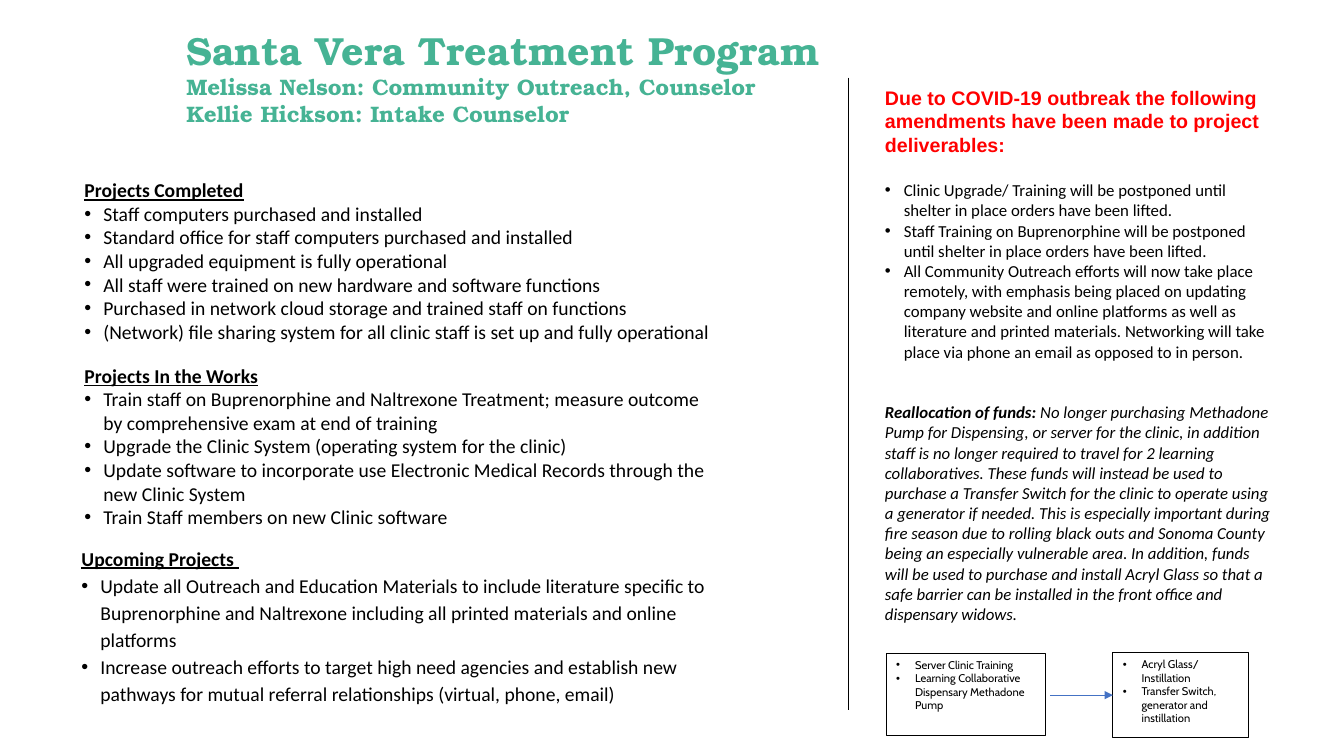
from dataclasses import dataclass

from lxml import etree
from pptx import Presentation
from pptx.dml.color import RGBColor
from pptx.enum.shapes import MSO_CONNECTOR, MSO_SHAPE
from pptx.enum.text import MSO_ANCHOR, MSO_AUTO_SIZE, PP_ALIGN
from pptx.oxml.ns import qn
from pptx.shapes.base import BaseShape
from pptx.shapes.connector import Connector
from pptx.slide import Slide
from pptx.text.text import TextFrame
from pptx.util import Pt

RECT = MSO_SHAPE.RECTANGLE
STRAIGHT = MSO_CONNECTOR.STRAIGHT
TOP = MSO_ANCHOR.TOP
GROW = MSO_AUTO_SIZE.SHAPE_TO_FIT_TEXT
LEFT = PP_ALIGN.LEFT
JUSTIFY = PP_ALIGN.JUSTIFY
LEFT_SIDE = 1


@dataclass(frozen=True)
class Style:
    face: str
    size: float
    color: RGBColor
    bold: bool = False
    italic: bool = False
    under: bool = False


BLACK = RGBColor(0, 0, 0)
GREEN = RGBColor(0x46, 0xB3, 0x94)


@dataclass(frozen=True)
class Theme:
    paper: RGBColor = RGBColor(255, 255, 255)
    ink: RGBColor = BLACK
    arrow: RGBColor = RGBColor(0x44, 0x72, 0xC4)
    title: Style = Style("TeX Gyre Bonum", 28, GREEN, bold=True)
    staff: Style = Style("TeX Gyre Bonum", 16, GREEN, bold=True)
    head: Style = Style("Calibri", 14, BLACK, bold=True, under=True)
    body: Style = Style("Calibri", 14, BLACK)
    alert: Style = Style("Arial", 14, RGBColor(255, 0, 0), bold=True)
    note: Style = Style("Calibri", 12, BLACK)
    funds: Style = Style("Calibri", 12, BLACK, italic=True)
    small: Style = Style("Cabin", 8, BLACK)
    hang: float = 13.5


THEME = Theme()


@dataclass(frozen=True)
class Para:
    text: str
    style: Style
    bullet: bool = False
    lead: str = ""
    align: PP_ALIGN = LEFT
    after: float = 0


@dataclass(frozen=True)
class Box:
    left: float
    top: float
    width: float
    height: float
    paras: list[Para]
    indent: float = 0
    space: float = 1


def points(style: Style, *texts: str) -> list[Para]:
    return [Para(text, style, bullet=True) for text in texts]


WORKS = Box(53.3, 256.3, 465, 126, [
    Para("Projects In the Works", THEME.head, align=JUSTIFY),
    *points(
        THEME.body,
        "Train staff on Buprenorphine and Naltrexone Treatment; measure outcome by comprehensive exam at end of training",
        "Upgrade the Clinic System (operating system for the clinic)",
        "Update software to incorporate use Electronic Medical Records through the new Clinic System",
        "Train Staff members on new Clinic software",
    ),
])
DONE = Box(53.3, 123.8, 508.3, 140.4, [
    Para("Projects Completed", THEME.head),
    *points(
        THEME.body,
        "Staff computers purchased and installed",
        "Standard office for staff computers purchased and installed",
        "All upgraded equipment is fully operational",
        "All staff were trained on new hardware and software functions",
        "Purchased in network cloud storage and trained staff on functions",
        "(Network) file sharing system for all clinic staff is set up and fully operational",
    ),
])
COMING = Box(15.1, 384.5, 504.7, 123.1, [
    Para("Upcoming Projects ", THEME.head, align=JUSTIFY),
    *points(
        THEME.body,
        "Update all Outreach and Education Materials to include literature specific to Buprenorphine and Naltrexone including all printed materials and online platforms",
        "Increase outreach efforts to target high need agencies and establish new pathways for mutual referral relationships (virtual, phone, email)",
    ),
], indent=36, space=1.15)
CHANGES = Box(625, 57.6, 291.6, 395.3, [
    Para("Due to COVID-19 outbreak the following amendments have been made to project deliverables:", THEME.alert, after=17),
    *points(
        THEME.note,
        "Clinic Upgrade/ Training will be postponed until shelter in place orders have been lifted.",
        "Staff Training on Buprenorphine will be postponed until shelter in place orders have been lifted.",
    ),
    Para(
        "All Community Outreach efforts will now take place remotely, with emphasis being placed on updating company website and online platforms as well as literature and printed materials. Networking will take place via phone an email as opposed to in person.",
        THEME.note, bullet=True, after=29,
    ),
    Para(
        " No longer purchasing Methadone Pump for Dispensing, or server for the clinic, in addition staff is no longer required to travel for 2 learning collaboratives. These funds will instead be used to purchase a Transfer Switch for the clinic to operate using a generator if needed. This is especially important during fire season due to rolling black outs and Sonoma County being an especially vulnerable area. In addition, funds will be used to purchase and install Acryl Glass so that a safe barrier can be installed in the front office and dispensary widows.",
        THEME.funds, lead="Reallocation of funds:",
    ),
])
TITLE = Box(126, 15.1, 488.9, 79.9, [
    Para("Santa Vera Treatment Program", THEME.title),
    Para("Melissa Nelson: Community Outreach, Counselor", THEME.staff),
    Para("Kellie Hickson: Intake Counselor", THEME.staff),
])
BEFORE = Box(633, 466.6, 113.8, 59, points(
    THEME.small,
    "Server Clinic Training",
    "Learning Collaborative Dispensary Methadone Pump",
))
AFTER = Box(794.9, 466.2, 97.2, 60.6, points(
    THEME.small,
    "Acryl Glass/ Instillation",
    "Transfer Switch, generator and instillation",
))


def write(frame: TextFrame, box: Box) -> None:
    frame.word_wrap = True
    frame.vertical_anchor = TOP
    for index, para in enumerate(box.paras):
        line = frame.paragraphs[0] if index == 0 else frame.add_paragraph()
        line.alignment = para.align
        line.line_spacing = box.space
        line.space_after = Pt(para.after)
        props = line._p.get_or_add_pPr()
        hang = THEME.hang if para.bullet else 0
        props.set("marL", str(Pt(box.indent + hang)))
        props.set("indent", str(Pt(-hang)))
        if para.bullet:
            etree.SubElement(props, qn("a:buFont")).set("typeface", "Arial")
            etree.SubElement(props, qn("a:buChar")).set("char", "•")
        font, style = line.font, para.style
        font.name, font.size = style.face, Pt(style.size)
        font.bold, font.italic = style.bold, style.italic
        font.underline = style.under
        font.color.rgb = style.color
        if para.lead:
            run = line.add_run()
            run.text = para.lead
            run.font.bold = True
        line.add_run().text = para.text


def add_text(slide: Slide, box: Box) -> None:
    shape = slide.shapes.add_textbox(Pt(box.left), Pt(box.top), Pt(box.width), Pt(box.height))
    write(shape.text_frame, box)
    shape.text_frame.auto_size = GROW


def add_panel(slide: Slide, box: Box) -> BaseShape:
    shape = slide.shapes.add_shape(RECT, Pt(box.left), Pt(box.top), Pt(box.width), Pt(box.height))
    shape.shadow.inherit = False
    shape.fill.solid()
    shape.fill.fore_color.rgb = THEME.paper
    shape.line.color.rgb = THEME.ink
    shape.line.width = Pt(0.75)
    write(shape.text_frame, box)
    return shape


def add_line(slide: Slide, x1: float, y1: float, x2: float, y2: float, color: RGBColor) -> Connector:
    line = slide.shapes.add_connector(STRAIGHT, Pt(x1), Pt(y1), Pt(x2), Pt(y2))
    line.line.color.rgb = color
    line.line.width = Pt(0.5)
    etree.SubElement(line._element.spPr, qn("a:effectLst"))
    return line


def main() -> None:
    deck = Presentation()
    deck.slide_width, deck.slide_height = Pt(960), Pt(540)
    slide = deck.slides.add_slide(deck.slide_layouts[6])
    for box in (WORKS, DONE, COMING):
        add_text(slide, box)
    add_panel(slide, BEFORE)
    goal = add_panel(slide, AFTER)
    add_text(slide, CHANGES)
    level = AFTER.top + AFTER.height / 2
    arrow = add_line(slide, 750.2, level, AFTER.left, level, THEME.arrow)
    arrow.end_connect(goal, LEFT_SIDE)
    etree.SubElement(arrow.line._get_or_add_ln(), qn("a:tailEnd")).set("type", "triangle")
    add_line(slide, 606.2, 55.4, 606.2, 506.9, THEME.ink)
    add_text(slide, TITLE)
    deck.save("out.pptx")


if __name__ == "__main__":
    main()
